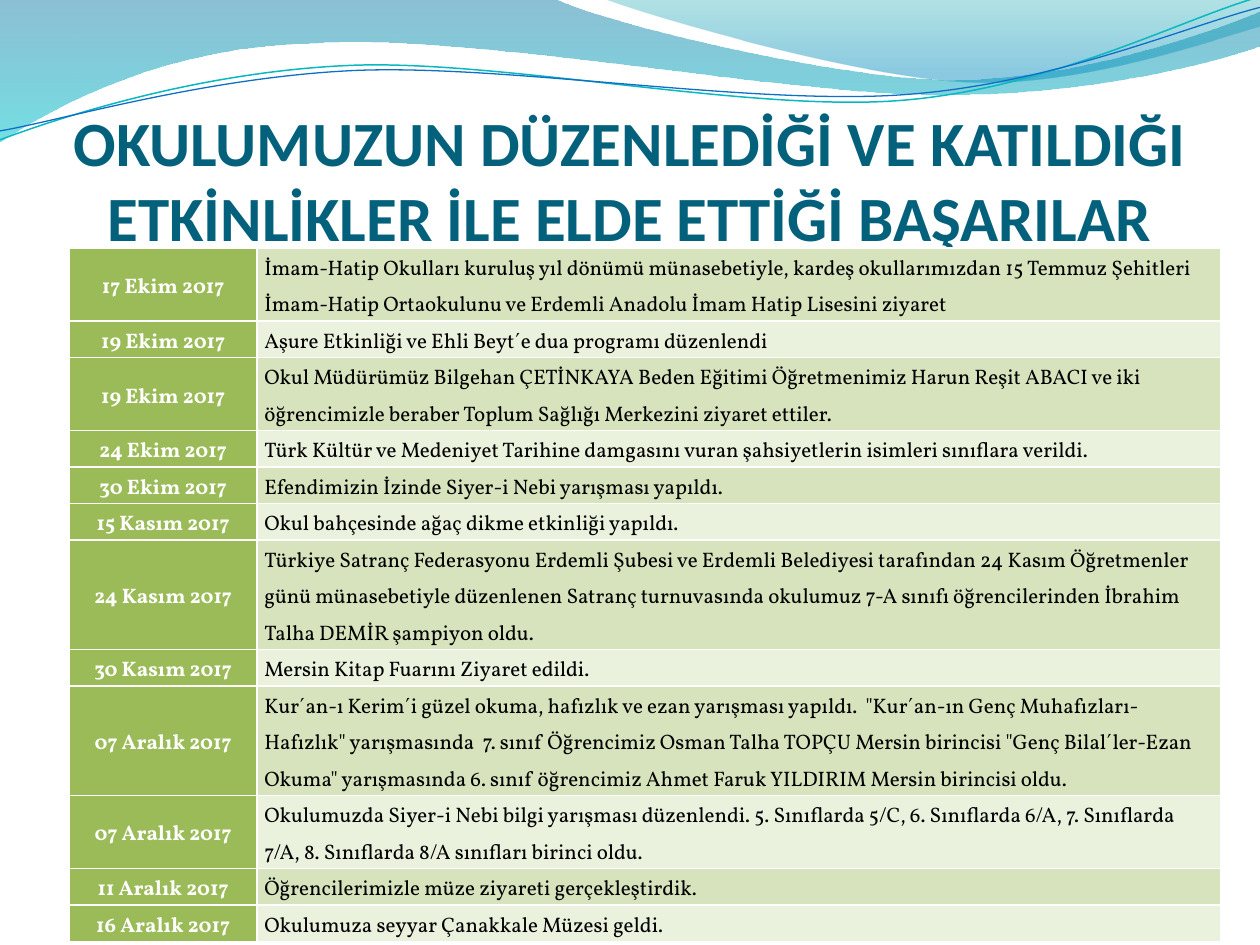
from lxml import etree
from pptx import Presentation
from pptx.dml.color import RGBColor
from pptx.enum import text
from pptx.oxml import ns
from pptx.util import Cm, Pt

TITLE_BLUE = RGBColor(0x04, 0x61, 0x7B)
DATE_GREEN = RGBColor(0x9B, 0xBB, 0x59)
BAND_GREENS = (RGBColor(0xD6, 0xE3, 0xBC), RGBColor(0xEA, 0xF1, 0xDD))
WHITE = RGBColor(0xFF, 0xFF, 0xFF)
BLACK = RGBColor(0, 0, 0)
TEAL_LINE = RGBColor(0x0A, 0xB8, 0xBF)
BLUE_LINE = RGBColor(0x0F, 0x6F, 0xC6)

# Gradient stops: position, colour, opacity in percent
WIDE_STOPS = ((0, RGBColor(0x00, 0x74, 0xA1), 45), (1, RGBColor(0x00, 0xC6, 0xCF), 55))
RIGHT_STOPS = ((0, RGBColor(0x00, 0xA1, 0xA9), 30), (0.8, RGBColor(0x00, 0x8B, 0xBF), 45))

# Outlines in cm: one point is a straight step, three points a Bezier curve
WIDE_WAVE = [
    [(0, 0)], [(11.18, -0.03)],
    [(12.09, 0.43), (16.87, 1.6), (19.25, 1.6)],
    [(21.67, 1.6), (24.33, 0.66), (25.4, 0.23)],
    [(25.43, 0.91)],
    [(24.97, 1.12), (22.1, 1.93), (18.95, 1.91)],
    [(15.8, 1.91), (9.7, 0.71), (6.53, 0.86)],
    [(3.28, 0.91), (1.17, 2.11), (-0.03, 2.87)],
]
RIGHT_WAVE = [
    [(12.17, -0.03)],
    [(12.93, 0.28), (17.32, 1.57), (19.53, 1.65)],
    [(21.74, 1.75), (24.41, 0.81), (25.4, 0.53)],
    [(25.4, 0)],
]
TEAL_CURVE = [
    [(0, 2.82)],
    [(1.22, 2.36), (4.01, 1.45), (7.04, 1.32)],
    [(10.03, 1.19), (15.06, 2.26), (18.11, 2.03)],
    [(21.16, 1.8), (23.83, 0.38), (25.35, -0.05)],
]
BLUE_CURVE = [
    [(0, 2.64)],
    [(1.19, 2.44), (4.17, 1.55), (7.19, 1.42)],
    [(10.24, 1.3), (15.16, 2.13), (18.21, 1.91)],
    [(21.23, 1.7), (23.9, 0.53), (25.4, 0.15)],
]

TITLE = "OKULUMUZUN DÜZENLEDİĞİ VE KATILDIĞI ETKİNLİKLER İLE ELDE ETTİĞİ BAŞARILAR"

# Date, event, number of text lines
EVENTS = [
    ("17 Ekim 2017", "İmam-Hatip Okulları kuruluş yıl dönümü münasebetiyle, kardeş okullarımızdan "
     "15 Temmuz Şehitleri İmam-Hatip Ortaokulunu ve Erdemli Anadolu İmam Hatip Lisesini ziyaret ", 2),
    ("19 Ekim 2017", "Aşure Etkinliği ve Ehli Beyt´e dua programı düzenlendi", 1),
    ("19 Ekim 2017", "Okul Müdürümüz Bilgehan ÇETİNKAYA Beden Eğitimi Öğretmenimiz Harun Reşit ABACI "
     "ve iki öğrencimizle beraber Toplum Sağlığı Merkezini ziyaret ettiler.", 2),
    ("24 Ekim 2017", "Türk Kültür ve Medeniyet Tarihine damgasını vuran şahsiyetlerin isimleri "
     "sınıflara verildi.", 1),
    ("30 Ekim 2017", "Efendimizin İzinde Siyer-i Nebi yarışması yapıldı.", 1),
    ("15 Kasım 2017", "Okul bahçesinde ağaç dikme etkinliği yapıldı.", 1),
    ("24 Kasım 2017", "Türkiye Satranç Federasyonu Erdemli Şubesi ve Erdemli Belediyesi tarafından "
     "24 Kasım Öğretmenler günü münasebetiyle düzenlenen Satranç turnuvasında okulumuz 7-A sınıfı "
     "öğrencilerinden İbrahim Talha DEMİR şampiyon oldu. ", 3),
    ("30 Kasım 2017", "Mersin Kitap Fuarını Ziyaret edildi.", 1),
    ("07 Aralık 2017", "Kur´an-ı Kerim´i güzel okuma, hafızlık ve ezan yarışması yapıldı.  "
     "\"Kur´an-ın Genç Muhafızları-Hafızlık\" yarışmasında  7. sınıf Öğrencimiz Osman Talha TOPÇU "
     "Mersin birincisi \"Genç Bilal´ler-Ezan Okuma\" yarışmasında 6. sınıf öğrencimiz "
     "Ahmet Faruk YILDIRIM Mersin birincisi oldu.", 3),
    ("07 Aralık 2017", "Okulumuzda Siyer-i Nebi bilgi yarışması düzenlendi. 5. Sınıflarda 5/C, "
     "6. Sınıflarda 6/A, 7. Sınıflarda 7/A, 8. Sınıflarda 8/A sınıfları birinci oldu.", 2),
    ("11 Aralık 2017", "Öğrencilerimizle müze ziyareti gerçekleştirdik.", 1),
    ("16 Aralık 2017", "Okulumuza seyyar Çanakkale Müzesi geldi.", 1),
]
LINE_HEIGHT = 0.69


def add_outline(slide, outline, close):
    """Draw an outline, joining each three-point segment into one Bezier curve."""
    start, *rest = [(Cm(x), Cm(y)) for segment in outline for x, y in segment]
    builder = slide.shapes.build_freeform(*start)
    builder.add_line_segments(rest, close=close)
    wave = builder.convert_to_shape()
    wave.shadow.inherit = False
    steps = iter(list(wave.element.spPr.iter(ns.qn("a:lnTo"))))
    for segment in outline[1:]:
        first, *others = [next(steps) for _ in segment]
        if others:
            first.tag = ns.qn("a:cubicBezTo")
        for step in others:
            first.append(step[0])
            step.getparent().remove(step)
    return wave


def add_wave(slide, outline, stops):
    wave = add_outline(slide, outline, close=True)
    wave.line.fill.background()
    wave.fill.gradient()
    wave.fill.gradient_angle = 270
    for stop, (position, color, _) in zip(wave.fill.gradient_stops, stops):
        stop.position = position
        stop.color.rgb = color
    colors = wave.element.spPr.iter(ns.qn("a:srgbClr"))
    for color, (_, _, opacity) in zip(colors, stops):
        etree.SubElement(color, ns.qn("a:alpha"), val=str(opacity * 1000))


def add_curve(slide, outline, color, width):
    curve = add_outline(slide, outline, close=False)
    curve.fill.background()
    curve.line.color.rgb = color
    curve.line.width = Pt(width)


def style_font(font, name, size, color, bold):
    font.name, font.size, font.bold = name, Pt(size), bold
    font.color.rgb = color


def set_title(slide):
    title = slide.shapes.title
    title.left, title.top, title.width, title.height = Cm(1.27), Cm(1.95), Cm(22.86), Cm(3.18)
    frame = title.text_frame
    frame.text = TITLE
    frame.word_wrap = True
    frame.auto_size = text.MSO_AUTO_SIZE.NONE
    frame.vertical_anchor = text.MSO_ANCHOR.BOTTOM
    frame.margin_left = frame.margin_right = frame.margin_bottom = 0
    heading = frame.paragraphs[0]
    heading.alignment = text.PP_ALIGN.CENTER
    style_font(heading.font, "Calibri", 36, TITLE_BLUE, True)


def add_borders(cell):
    properties = cell._tc.get_or_add_tcPr()
    for index, side in enumerate("LRTB"):
        border = etree.Element(ns.qn(f"a:ln{side}"), w=str(Pt(1)))
        fill = etree.SubElement(border, ns.qn("a:solidFill"))
        etree.SubElement(fill, ns.qn("a:srgbClr"), val=str(WHITE))
        properties.insert(index, border)


def fill_cell(cell, content, background, color, bold, alignment):
    cell.text = content
    cell.vertical_anchor = text.MSO_ANCHOR.MIDDLE
    cell.margin_left = cell.margin_right = Cm(0.15)
    cell.margin_top = cell.margin_bottom = 0
    cell.fill.solid()
    cell.fill.fore_color.rgb = background
    add_borders(cell)
    paragraph = cell.text_frame.paragraphs[0]
    paragraph.alignment = alignment
    paragraph.line_spacing = 1.25
    style_font(paragraph.font, "Vollkorn", 12, color, bold)


def add_events(slide):
    height = LINE_HEIGHT * sum(lines for _, _, lines in EVENTS)
    events = slide.shapes.add_table(len(EVENTS), 2, Cm(1.4), Cm(5), Cm(23.21), Cm(height)).table
    events.first_row = events.horz_banding = False
    events.columns[0].width, events.columns[1].width = Cm(3.78), Cm(19.43)
    for index, (date, event, lines) in enumerate(EVENTS):
        events.rows[index].height = Cm(LINE_HEIGHT * lines)
        fill_cell(events.cell(index, 0), date, DATE_GREEN, WHITE, True, text.PP_ALIGN.CENTER)
        fill_cell(events.cell(index, 1), event, BAND_GREENS[index % 2], BLACK, False,
                  text.PP_ALIGN.LEFT)


def main():
    deck = Presentation()
    deck.slide_width, deck.slide_height = Cm(25.4), Cm(19.05)
    slide = deck.slides.add_slide(deck.slide_layouts[5])
    # Waves along the top
    add_wave(slide, WIDE_WAVE, WIDE_STOPS)
    add_wave(slide, RIGHT_WAVE, RIGHT_STOPS)
    add_curve(slide, TEAL_CURVE, TEAL_LINE, 0.85)
    add_curve(slide, BLUE_CURVE, BLUE_LINE, 0.75)
    # Heading and list of events
    set_title(slide)
    add_events(slide)
    deck.save("out.pptx")


if __name__ == "__main__":
    main()
